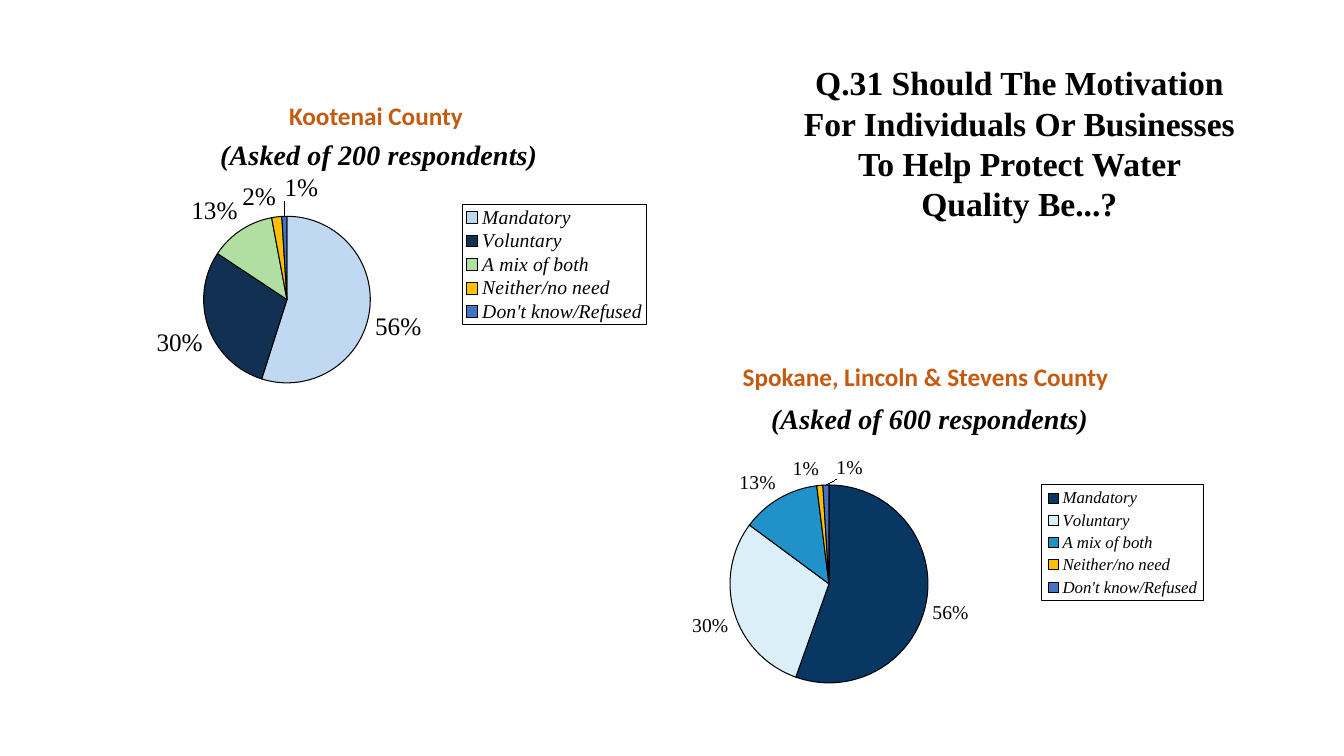
from lxml.etree import SubElement
from pptx import Presentation
from pptx.chart.data import CategoryChartData
from pptx.dml.color import RGBColor
from pptx.enum.chart import XL_CHART_TYPE, XL_LABEL_POSITION, XL_LEGEND_POSITION
from pptx.enum.text import MSO_AUTO_SIZE, PP_ALIGN
from pptx.oxml import parse_xml
from pptx.oxml.ns import nsdecls, qn
from pptx.util import Inches, Pt

WIDTH, HEIGHT = 13.33, 7.5
SERIF, SANS = "Times New Roman", "Calibri"
BLACK, ORANGE = "000000", "C55A11"
ANSWERS = ["Mandatory", "Voluntary", "A mix of both", "Neither/no need", "Don't know/Refused"]


def color(value):
    return RGBColor.from_string(value)


def percent_box(left, top, width, height):
    return [Inches(share * side / 100) for share, side in
            ((left, WIDTH), (top, HEIGHT), (width, WIDTH), (height, HEIGHT))]


def style_font(font, name, size, fill=BLACK, bold=False, italic=False):
    font.name, font.size = name, Pt(size)
    font.bold, font.italic = bold, italic
    font.color.rgb = color(fill)


def add_heading(slide, text, box, name, size, fill):
    shape = slide.shapes.add_textbox(*percent_box(*box))
    frame = shape.text_frame
    frame.word_wrap = True
    frame.auto_size = MSO_AUTO_SIZE.SHAPE_TO_FIT_TEXT
    frame.text = text
    paragraph = frame.paragraphs[0]
    paragraph.alignment = PP_ALIGN.CENTER
    style_font(paragraph.runs[0].font, name, size, fill, bold=True)


def place(element, position, shares, inner=False, edge=True):
    for old in element.findall(qn("c:layout")):
        element.remove(old)
    layout = parse_xml(f"<c:layout {nsdecls('c')}/>")
    manual = SubElement(layout, qn("c:manualLayout"))
    settings = [("layoutTarget", "inner")] if inner else []
    if edge:
        settings += [("xMode", "edge"), ("yMode", "edge")]
    settings += zip("xywh", shares)
    for tag, value in settings:
        SubElement(manual, qn(f"c:{tag}")).set("val", str(value))
    element.insert(position, layout)


def add_legend(chart, size, shares):
    chart.has_legend = True
    legend = chart.legend
    legend.position = XL_LEGEND_POSITION.RIGHT
    legend.include_in_layout = False
    style_font(legend.font, SERIF, size, italic=True)
    element = legend._element
    place(element, 1, shares)
    border = parse_xml(
        f'<c:spPr {nsdecls("c", "a")}><a:solidFill><a:srgbClr val="FFFFFF"/></a:solidFill>'
        f'<a:ln w="9525"><a:solidFill><a:srgbClr val="{BLACK}"/></a:solidFill></a:ln></c:spPr>')
    element.find(qn("c:overlay")).addnext(border)


def add_title(chart, text, shares):
    chart.has_title = True
    title = chart.chart_title
    title.text_frame.text = text
    style_font(title.text_frame.paragraphs[0].runs[0].font, SERIF, 20, bold=True, italic=True)
    place(title._element, 1, shares)


def add_labels(plot, size, last_offset):
    plot.has_data_labels = True
    series = plot.series[0]
    last_label = series.points[len(ANSWERS) - 1].data_label
    for labels in (series.data_labels, last_label):
        style_font(labels.font, SERIF, size)
        labels.position = XL_LABEL_POSITION.OUTSIDE_END
    series.data_labels.show_value = True
    series.data_labels.show_percentage = False
    series.data_labels.number_format = "0%"
    series.data_labels.number_format_is_linked = False
    last_element = series.data_labels._element.find(qn("c:dLbl"))
    place(last_element, 1, last_offset, edge=False)


def add_pie(slide, box, title, title_at, values, fills, pie_at,
            legend_size, legend_at, label_size, last_offset):
    data = CategoryChartData(number_format="0%")
    data.categories = ANSWERS
    data.add_series("Series 1", values)
    chart = slide.shapes.add_chart(XL_CHART_TYPE.PIE, *percent_box(*box), data).chart
    style_font(chart.font, SANS, 10)
    add_title(chart, title, title_at)
    add_legend(chart, legend_size, legend_at)
    plot = chart.plots[0]
    plot.vary_by_categories = True
    place(plot._element.getparent(), 0, pie_at, inner=True)
    for index, fill in enumerate(fills):
        point_format = plot.series[0].points[index].format
        point_format.fill.solid()
        point_format.fill.fore_color.rgb = color(fill)
        point_format.line.color.rgb = color(BLACK)
        point_format.line.width = Pt(0.75)
    add_labels(plot, label_size, last_offset)


def main():
    presentation = Presentation()
    presentation.slide_width, presentation.slide_height = Inches(WIDTH), Inches(HEIGHT)
    slide = presentation.slides.add_slide(presentation.slide_layouts[6])
    add_pie(slide, (6.6, 15.47, 42.76, 38.67),
            "(Asked of 200 respondents)", (0.22, 0.05),
            (0.56, 0.3, 0.13, 0.02, 0.01),
            ("C1D8F2", "113052", "B0DFA1", "FFC000", "4472C4"),
            (0.2, 0.34, 0.29, 0.57), 14, (0.65, 0.3, 0.32, 0.41), 18, (0.03, -0.03))
    add_pie(slide, (45.39, 51.6, 44.64, 40.4),
            "(Asked of 600 respondents)", (0.26, 0.02),
            (0.56, 0.3, 0.13, 0.01, 0.01),
            ("083763", "DBEFF9", "2191C9", "FFC000", "4472C4"),
            (0.2, 0.31, 0.33, 0.65), 12, (0.72, 0.31, 0.27, 0.38), 14, (0.04, 0))
    add_heading(slide, "Spokane, Lincoln & Stevens County",
                (53.34, 47.2, 31.06, 5.47), SANS, 18, ORANGE)
    add_heading(slide, "Kootenai County",
                (12.45, 12.67, 31.06, 5.47), SANS, 18, ORANGE)
    add_heading(slide, "Q.31 Should The Motivation For Individuals Or Businesses "
                "To Help Protect Water Quality Be...?",
                (58.89, 7.6, 33.91, 22.93), SERIF, 24, BLACK)
    presentation.save("out.pptx")


if __name__ == "__main__":
    main()
